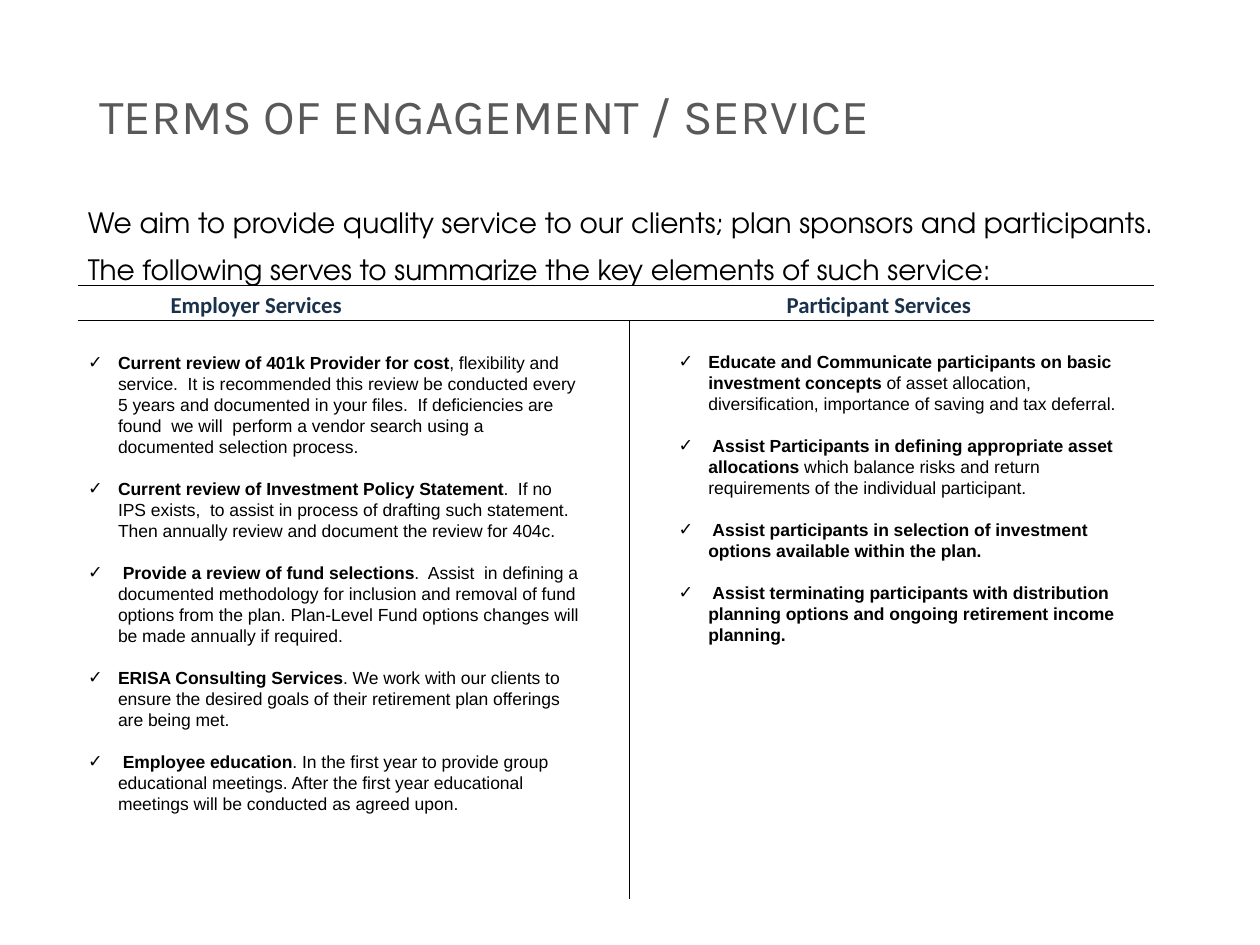
from lxml import etree
from pptx import Presentation
from pptx.dml.color import RGBColor
from pptx.enum.shapes import MSO_CONNECTOR
from pptx.enum.text import MSO_ANCHOR
from pptx.oxml.ns import qn
from pptx.util import Cm, Pt

STRAIGHT = MSO_CONNECTOR.STRAIGHT
TOP, BOTTOM = MSO_ANCHOR.TOP, MSO_ANCHOR.BOTTOM

BLACK = RGBColor(0x00, 0x00, 0x00)
GREY = RGBColor(0x59, 0x59, 0x59)
NAVY = RGBColor(0x19, 0x31, 0x4A)

TITLE = "TERMS OF ENGAGEMENT / SERVICE"
INTRO = ("We aim to provide quality service to our clients; plan sponsors and participants. "
         "The following serves to summarize the key elements of such service:")

# Each service is a bold lead followed by regular text.
EMPLOYER_SERVICES = [
    ("Current review of 401k Provider for cost",
     ", flexibility and service.  It is recommended this review be conducted every 5 years "
     "and documented in your files.  If deficiencies are found  we will  perform a vendor "
     "search using a documented selection process."),
    ("Current review of Investment Policy Statement",
     ".  If no IPS exists,  to assist in process of drafting such statement.  "
     "Then annually review and document the review for 404c."),
    (" Provide a review of fund selections",
     ".  Assist  in defining a documented methodology for inclusion and removal of fund "
     "options from the plan. Plan-Level Fund options changes will be made annually if required."),
    ("ERISA Consulting Services",
     ". We work with our clients to ensure the desired goals of their retirement plan "
     "offerings are being met."),
    (" Employee education",
     ". In the first year to provide group educational meetings. After the first year "
     "educational meetings will be conducted as agreed upon."),
]
PARTICIPANT_SERVICES = [
    ("Educate and Communicate participants on basic investment concepts ",
     "of asset allocation, diversification, importance of saving and tax deferral."),
    (" Assist Participants in defining appropriate asset allocations ",
     "which balance risks and return requirements of the individual participant."),
    (" Assist participants in selection of investment options available within the plan.", ""),
    (" Assist terminating participants with distribution planning options and ongoing "
     "retirement income planning.", ""),
]

# Boxes are left, top, width, height in centimetres.
COLUMNS = [
    ("Employer Services", (3.21, 5.76, 4.6, 0.79), EMPLOYER_SERVICES, (1.55, 6.98, 10.36, 9.63)),
    ("Participant Services", (15.63, 5.76, 4.9, 0.79), PARTICIPANT_SERVICES,
     (13.45, 6.96, 9.8, 6.22)),
]
RULE_LEFT, RULE_RIGHT = 1.57, 23.27
HEADER_TOP, HEADER_BOTTOM = 5.75, 6.46
DIVIDER_X, DIVIDER_BOTTOM = 12.69, 18.13
RULES = [
    (RULE_LEFT, HEADER_TOP, RULE_RIGHT, HEADER_TOP),
    (RULE_LEFT, HEADER_BOTTOM, RULE_RIGHT, HEADER_BOTTOM),
    (DIVIDER_X, HEADER_BOTTOM, DIVIDER_X, DIVIDER_BOTTOM),
]

TITLE_FONT = {"name": "Karla", "size": Pt(28), "bold": False}
INTRO_FONT = {"name": "TeX Gyre Adventor", "size": Pt(16), "bold": False}
HEADING_FONT = {"name": "Calibri", "size": Pt(13), "bold": True}
BODY_FONT = {"name": "Arial", "size": Pt(10), "bold": False}
LEAD_FONT = {**BODY_FONT, "bold": True}
SERVICE_GAP = Pt(12)
BULLET_INDENT = Cm(0.6)


def add_text_frame(slide, box, inset=(0.23, 0.11), anchor=TOP):
    frame = slide.shapes.add_textbox(*map(Cm, box)).text_frame
    horizontal, vertical = map(Cm, inset)
    settings = {"word_wrap": True, "vertical_anchor": anchor,
                "margin_left": horizontal, "margin_right": horizontal,
                "margin_top": vertical, "margin_bottom": vertical}
    for name, value in settings.items():
        setattr(frame, name, value)
    return frame


def add_run(paragraph, text, font_values, color):
    run = paragraph.add_run()
    run.text = text
    for name, value in font_values.items():
        setattr(run.font, name, value)
    run.font.color.rgb = color


def add_check_bullet(paragraph):
    properties = paragraph._p.get_or_add_pPr()
    properties.set("marL", str(BULLET_INDENT))
    properties.set("indent", str(-BULLET_INDENT))
    etree.SubElement(properties, qn("a:buFont")).set("typeface", "Arial")
    etree.SubElement(properties, qn("a:buChar")).set("char", "✓")


def add_services(slide, services, box):
    frame = add_text_frame(slide, box)
    for index, (lead, detail) in enumerate(services):
        paragraph = frame.add_paragraph() if index else frame.paragraphs[0]
        add_check_bullet(paragraph)
        if index:
            paragraph.space_before = SERVICE_GAP
        add_run(paragraph, lead, LEAD_FONT, BLACK)
        if detail:
            add_run(paragraph, detail, BODY_FONT, BLACK)


def add_rule(slide, ends):
    rule = slide.shapes.add_connector(STRAIGHT, *map(Cm, ends))
    rule.line.color.rgb = BLACK
    rule.line.width = Pt(0.75)
    etree.SubElement(rule._element.spPr, qn("a:effectLst"))


def main():
    presentation = Presentation()
    presentation.slide_width, presentation.slide_height = Cm(25.4), Cm(19.05)
    slide = presentation.slides.add_slide(presentation.slide_layouts[6])

    title = add_text_frame(slide, (1.75, 0.89, 19.33, 2.16), (0.25, 0.13), BOTTOM).paragraphs[0]
    title.line_spacing = 0.9
    add_run(title, TITLE, TITLE_FONT, GREY)

    intro = add_text_frame(slide, (1.52, 3.74, 22.35, 2.2), (0.25, 0.13)).paragraphs[0]
    intro.line_spacing = 1.4
    add_run(intro, INTRO, INTRO_FONT, BLACK)

    for heading, heading_box, services, services_box in COLUMNS:
        paragraph = add_text_frame(slide, heading_box).paragraphs[0]
        add_run(paragraph, heading, HEADING_FONT, NAVY)
        add_services(slide, services, services_box)

    for ends in RULES:
        add_rule(slide, ends)

    presentation.save("out.pptx")


if __name__ == "__main__":
    main()
